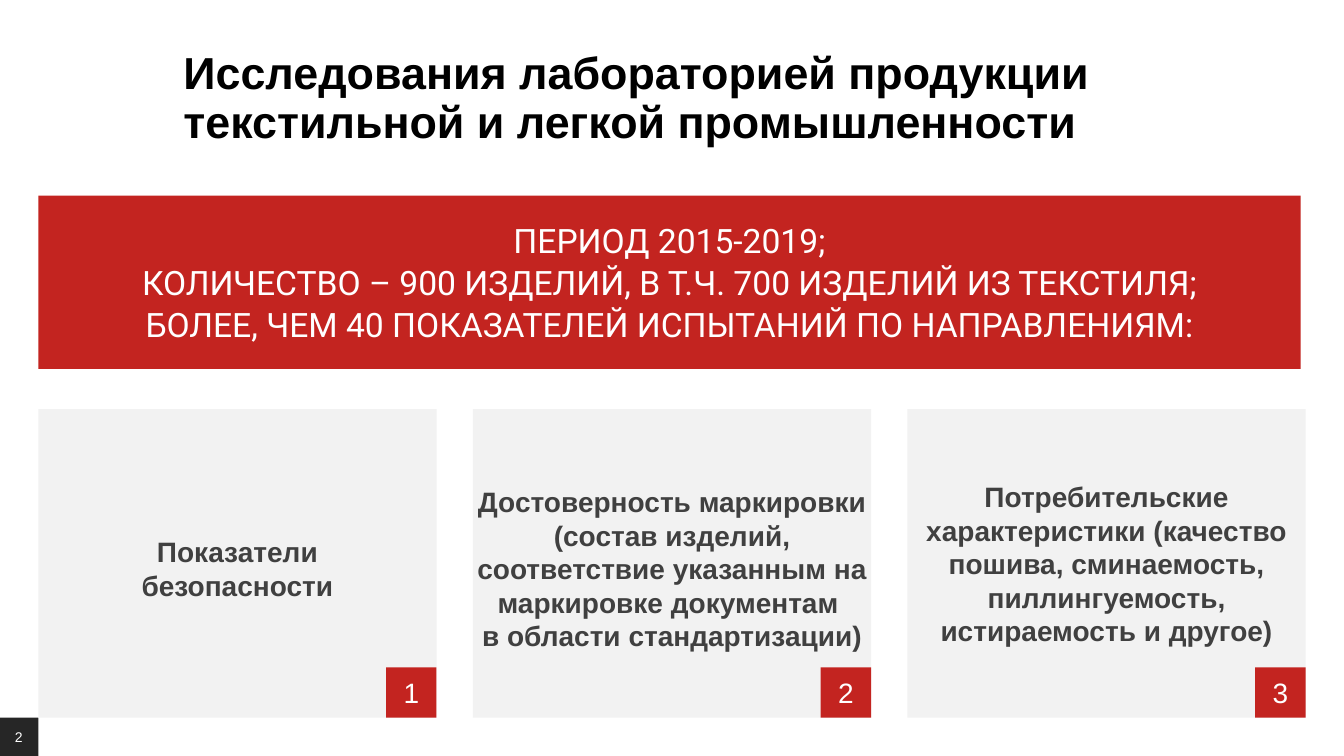
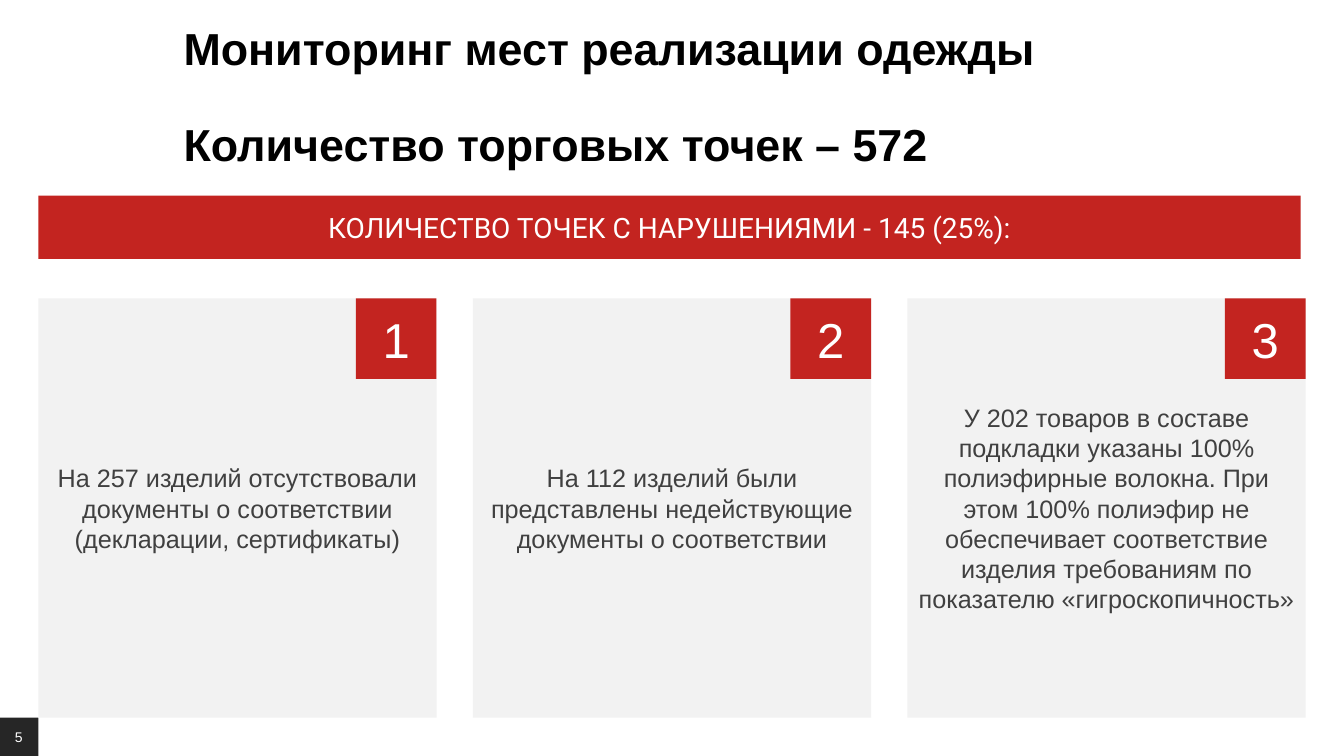
from pptx import Presentation
from pptx.dml.color import RGBColor
from pptx.enum.shapes import MSO_SHAPE
from pptx.enum.text import MSO_ANCHOR, PP_ALIGN
from pptx.util import Inches, Pt

COLORS = {
    "title": "000000",
    "red": "C32420",
    "card": "F2F2F2",
    "body": "404040",
    "white": "FFFFFF",
    "dark": "262626",
}
FONT = "Arial"
BAND_FONT = "Roboto"

# Shared grid, in inches
LEFT = 0.38
BAND_TOP, BAND_WIDTH = 1.94, 12.52
CARD_WIDTH, CARD_PITCH, CARD_BOTTOM = 3.95, 4.31, 7.12
EVEN_INSETS = (0.1, 0.1, 0.1, 0.1)
TOP_INSET = (0, 0.1, 0, 0)
NO_INSETS = (0, 0, 0, 0)


def write_text(shape, paragraphs, size, color, font=FONT, bold=False,
               align=PP_ALIGN.CENTER, insets=NO_INSETS, gap=0, line_spacing=None):
    """Fill a shape with paragraphs; a newline inside one is a line break."""
    frame = shape.text_frame
    frame.word_wrap = True
    frame.vertical_anchor = MSO_ANCHOR.MIDDLE
    (frame.margin_left, frame.margin_top,
     frame.margin_right, frame.margin_bottom) = [Inches(inset) for inset in insets]
    for index, text in enumerate(paragraphs):
        paragraph = frame.add_paragraph() if index else frame.paragraphs[0]
        paragraph.alignment = align
        if index and gap:
            paragraph.space_before = Pt(gap)
        if line_spacing:
            paragraph.line_spacing = line_spacing
        for line_index, line in enumerate(text.split("\n")):
            if line_index:
                paragraph.add_line_break()
            run = paragraph.add_run()
            run.text = line
            run.font.name = font
            run.font.size = Pt(size)
            run.font.bold = bold
            run.font.color.rgb = RGBColor.from_string(COLORS[color])


def add_box(slide, left, top, width, height, fill):
    shape = slide.shapes.add_shape(MSO_SHAPE.RECTANGLE, Inches(left), Inches(top),
                                   Inches(width), Inches(height))
    shape.shadow.inherit = False
    shape.fill.solid()
    shape.fill.fore_color.rgb = RGBColor.from_string(COLORS[fill])
    shape.line.fill.background()
    return shape


def add_page_number(slide, number):
    box = add_box(slide, -0.01, 7.12, 0.39, 0.39, "dark")
    write_text(box, [number], 10, "white")


def add_title(slide, paragraphs, width, gap=0):
    box = slide.shapes.add_textbox(Inches(1.82), Inches(0.41), Inches(width), Inches(1.15))
    write_text(box, paragraphs, 32, "title", bold=True, align=PP_ALIGN.LEFT,
               gap=gap, line_spacing=0.9)


def add_band(slide, paragraphs, height, size):
    band = add_box(slide, LEFT, BAND_TOP, BAND_WIDTH, height, "red")
    write_text(band, paragraphs, size, "white", font=BAND_FONT,
               insets=(0.16, 0.16, 0.16, 0.16), gap=1.2)


def add_cards(slide, cards, top, size, badge, badge_top, badge_size, bold=False):
    """Row of cards, each with a numbered badge at its right edge."""
    for index, (paragraphs, insets) in enumerate(cards):
        left = LEFT + index * CARD_PITCH
        card = add_box(slide, left, top, CARD_WIDTH, CARD_BOTTOM - top, "card")
        write_text(card, paragraphs, size, "body", bold=bold, insets=insets)
        number = add_box(slide, left + CARD_WIDTH - badge, badge_top, badge, badge, "red")
        write_text(number, [str(index + 1)], badge_size, "white")


def add_slide(presentation, number):
    slide = presentation.slides.add_slide(presentation.slide_layouts[6])
    add_page_number(slide, number)
    return slide


def build_research(presentation):
    slide = add_slide(presentation, "2")
    add_title(slide, ["Исследования лабораторией продукции "
                      "текстильной и легкой промышленности"], 10.6)
    add_band(slide, [
        "ПЕРИОД 2015-2019;",
        "КОЛИЧЕСТВО – 900 ИЗДЕЛИЙ, В Т.Ч. 700 ИЗДЕЛИЙ ИЗ ТЕКСТИЛЯ;",
        "БОЛЕЕ, ЧЕМ 40 ПОКАЗАТЕЛЕЙ ИСПЫТАНИЙ ПО НАПРАВЛЕНИЯМ:",
    ], 1.72, 24)
    cards = [
        (["Показатели", "безопасности"], TOP_INSET),
        (["Достоверность маркировки (состав изделий, соответствие указанным "
          "на маркировке документам \nв области стандартизации)"], TOP_INSET),
        (["Потребительские характеристики (качество пошива, сминаемость, "
          "пиллингуемость, истираемость и другое)"], EVEN_INSETS),
    ]
    badge = 0.5
    add_cards(slide, cards, 4.06, 20, badge, CARD_BOTTOM - badge, 20, bold=True)


def build_monitoring(presentation):
    slide = add_slide(presentation, "5")
    add_title(slide, ["Мониторинг мест реализации одежды",
                      "Количество торговых точек – 572"], 8.48, gap=34)
    add_band(slide, ["КОЛИЧЕСТВО ТОЧЕК С НАРУШЕНИЯМИ - 145 (25%):"], 0.63, 20)
    texts = [
        "На 257 изделий отсутствовали документы о соответствии (декларации, сертификаты)",
        "На 112 изделий были представлены недействующие документы о соответствии",
        "У 202 товаров в составе подкладки указаны 100% полиэфирные волокна. "
        "При этом 100% полиэфир не обеспечивает соответствие изделия требованиям "
        "по показателю «гигроскопичность»",
    ]
    top = 2.96
    add_cards(slide, [([text], EVEN_INSETS) for text in texts], top, 18, 0.8, top, 35)


def main():
    presentation = Presentation()
    presentation.slide_width = Inches(13.33)
    presentation.slide_height = Inches(7.5)
    build_research(presentation)
    build_monitoring(presentation)
    presentation.save("out.pptx")


if __name__ == "__main__":
    main()
